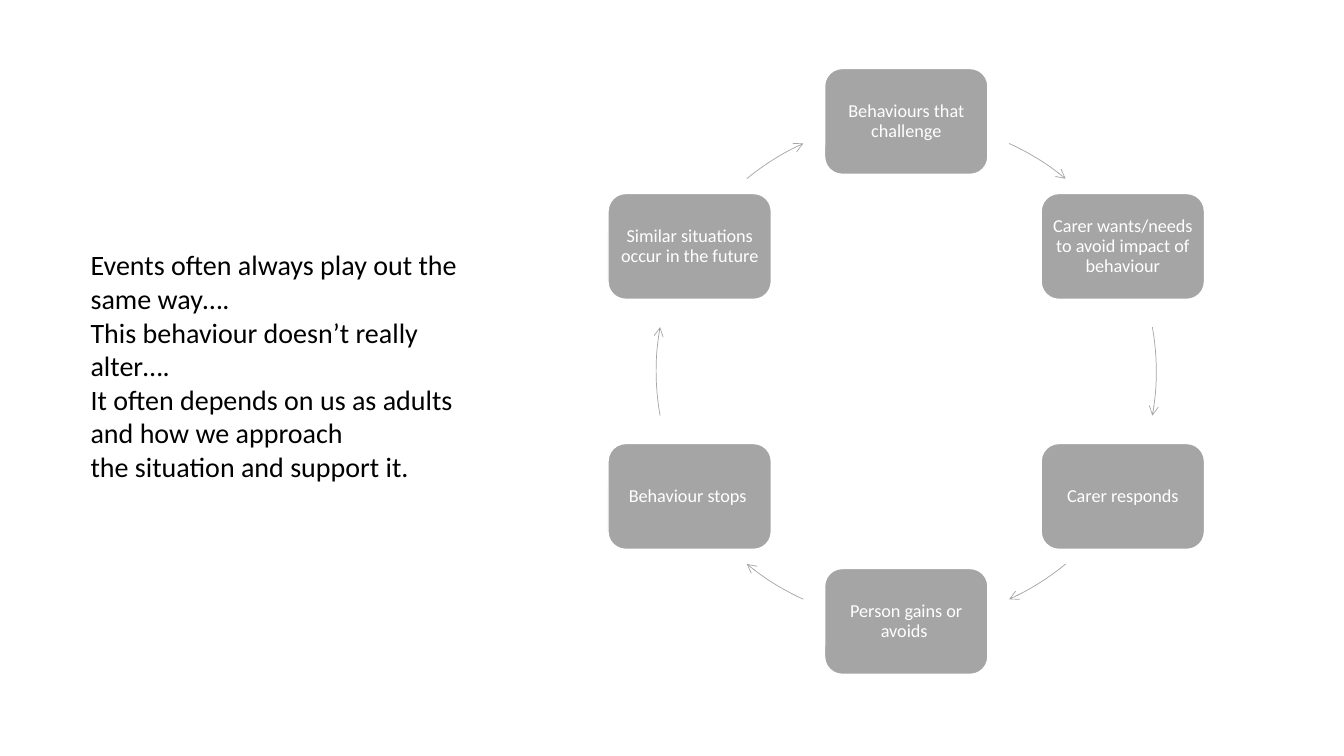
from dataclasses import dataclass
from math import cos, radians, sin

from lxml import etree
from pptx import Presentation, util as u
from pptx.dml.color import RGBColor
from pptx.enum import shapes, text
from pptx.oxml import ns


@dataclass(frozen=True)
class Theme:
    """Colours, font and sizes of the slide."""
    font: str = "Calibri"
    grey: str = "A5A5A5"
    white: str = "FFFFFF"
    black: str = "000000"
    message_size: int = 20
    step_size: int = 13


THEME = Theme()
WIDTH, HEIGHT = u.Inches(13.33), u.Inches(7.5)
CENTRE_X, CENTRE_Y = 0.01 * 67.43 * WIDTH, 0.01 * 49.13 * HEIGHT
RADIUS = 0.01 * 33.07 * HEIGHT
STEP_WIDTH, STEP_HEIGHT = 0.01 * 12.15 * WIDTH, 0.14 * HEIGHT

STEPS = [
    "Behaviours that challenge",
    "Carer wants/needs to avoid impact of behaviour",
    "Carer responds",
    "Person gains or avoids ",
    "Behaviour stops ",
    "Similar situations occur in the future",
]
ARROWS = [(24.3, 39.6), (79.8, 100.2), (140.4, 155.7)]
MESSAGE = [
    "Events often always play out the same way….",
    "This behaviour doesn’t really alter….",
    "It often depends on us as adults and how we approach",
    "the situation and support it.",
]


def write_run(paragraph, words, size, colour):
    """Add one styled run to a paragraph."""
    run = paragraph.add_run()
    run.text = words
    run.font.name = THEME.font
    run.font.size = u.Pt(size)
    run.font.color.rgb = RGBColor.from_string(colour)


def add_step(slide, words, angle):
    """Place a rounded step on the ring, with its angle clockwise from the top."""
    left = CENTRE_X + RADIUS * sin(radians(angle)) - STEP_WIDTH / 2
    top = CENTRE_Y - RADIUS * cos(radians(angle)) - STEP_HEIGHT / 2
    shape = slide.shapes.add_shape(
        shapes.MSO_SHAPE.ROUNDED_RECTANGLE,
        int(left), int(top), int(STEP_WIDTH), int(STEP_HEIGHT))
    shape.shadow.inherit = False
    shape.fill.solid()
    shape.fill.fore_color.rgb = RGBColor.from_string(THEME.grey)
    shape.line.color.rgb = RGBColor.from_string(THEME.white)
    shape.line.width = u.Pt(1)
    frame = shape.text_frame
    frame.word_wrap = True
    frame.vertical_anchor = text.MSO_ANCHOR.MIDDLE
    frame.margin_left = frame.margin_right = u.Inches(0.05)
    frame.margin_top = frame.margin_bottom = u.Inches(0.05)
    paragraph = frame.paragraphs[0]
    paragraph.alignment = text.PP_ALIGN.CENTER
    paragraph.line_spacing = 0.9
    write_run(paragraph, words, THEME.step_size, THEME.white)


def add_arc_arrow(slide, start, end):
    """Draw an arrow along the ring between two angles clockwise from the top."""
    shape = slide.shapes.add_shape(
        shapes.MSO_SHAPE.ARC, int(CENTRE_X - RADIUS), int(CENTRE_Y - RADIUS),
        int(2 * RADIUS), int(2 * RADIUS))
    for index, angle in enumerate((start, end)):
        shape.adjustments[index] = (angle - 90) % 360 * 0.6
    shape.shadow.inherit = False
    shape.fill.background()
    shape.line.color.rgb = RGBColor.from_string(THEME.grey)
    shape.line.width = u.Pt(0.5)
    outline = shape.line._get_or_add_ln()
    etree.SubElement(outline, ns.qn("a:tailEnd"), type="arrow")


def add_message(slide, lines):
    """Write the message at the left, one paragraph a line."""
    box = slide.shapes.add_textbox(
        int(0.06 * WIDTH), int(0.01 * 32.13 * HEIGHT),
        int(0.01 * 31.73 * WIDTH), int(0.01 * 36.8 * HEIGHT))
    frame = box.text_frame
    frame.word_wrap = True
    frame.auto_size = text.MSO_AUTO_SIZE.SHAPE_TO_FIT_TEXT
    for index, words in enumerate(lines):
        paragraph = frame.add_paragraph() if index else frame.paragraphs[0]
        write_run(paragraph, words, THEME.message_size, THEME.black)


def main():
    """Build the slide and save it."""
    presentation = Presentation()
    presentation.slide_width, presentation.slide_height = WIDTH, HEIGHT
    slide = presentation.slides.add_slide(presentation.slide_layouts[6])
    for index, words in enumerate(STEPS):
        add_step(slide, words, index * 360 / len(STEPS))
    for start, end in ARROWS:
        add_arc_arrow(slide, start, end)
        add_arc_arrow(slide, start + 180, end + 180)
    add_message(slide, MESSAGE)
    presentation.save("out.pptx")


if __name__ == "__main__":
    main()
